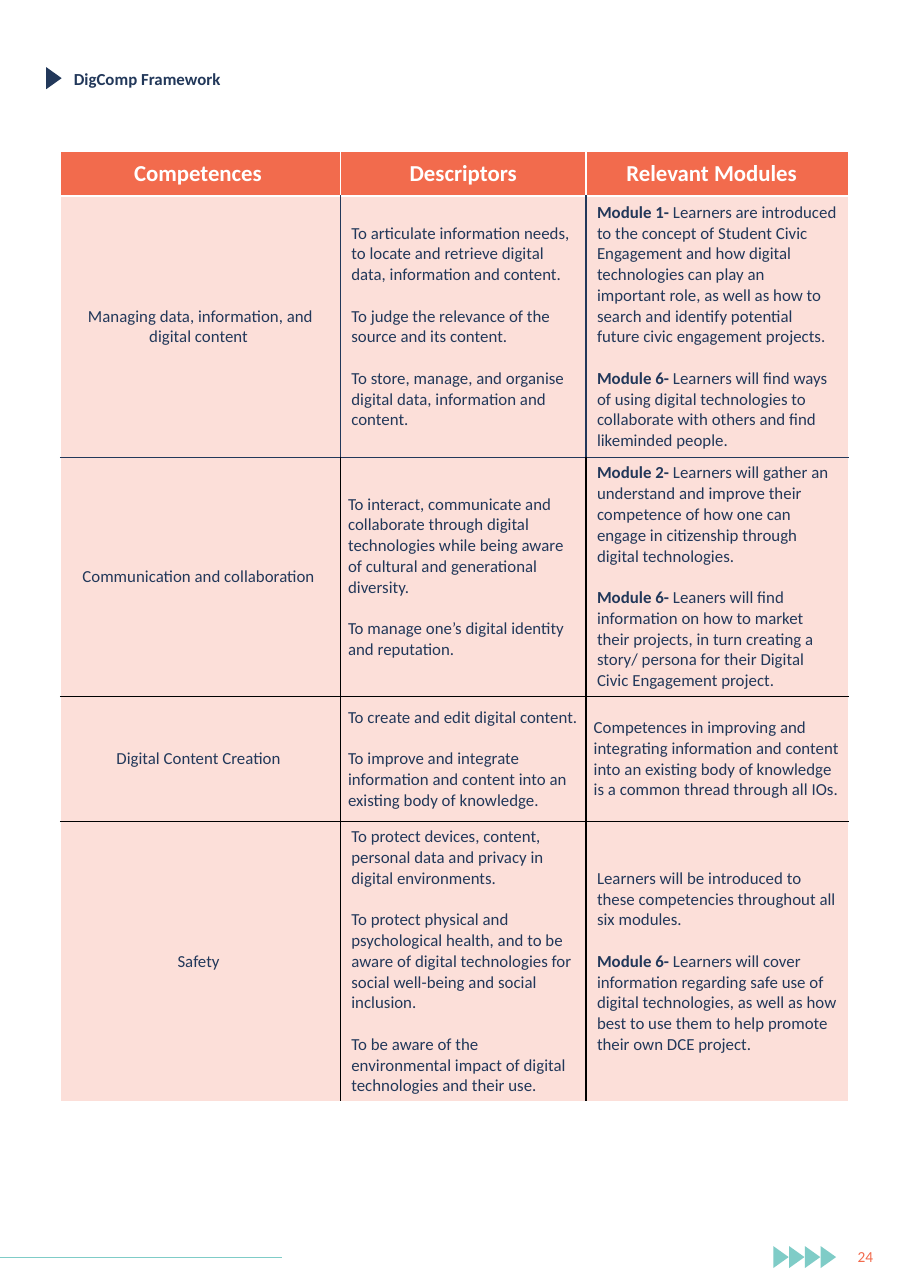
from lxml import etree
from pptx import Presentation
from pptx.dml.color import RGBColor
from pptx.enum.shapes import MSO_CONNECTOR
from pptx.enum.text import MSO_ANCHOR, MSO_AUTO_SIZE, PP_ALIGN
from pptx.oxml.ns import qn
from pptx.util import Inches, Pt

STRAIGHT = MSO_CONNECTOR.STRAIGHT
TOP, MIDDLE = MSO_ANCHOR.TOP, MSO_ANCHOR.MIDDLE
LEFT, CENTER = PP_ALIGN.LEFT, PP_ALIGN.CENTER
FIXED_SIZE = MSO_AUTO_SIZE.NONE

CORAL = RGBColor(0xF2, 0x6B, 0x4D)
NAVY = RGBColor(0x22, 0x38, 0x5A)
TEAL = RGBColor(0x7F, 0xCC, 0xC7)
WHITE = RGBColor(0xFF, 0xFF, 0xFF)
BLACK = RGBColor(0, 0, 0)
FONT = "Calibri"

TITLE = "DigComp Framework"
PAGE_NUMBER = "24"
HEADINGS = ["Competences ", "Descriptors", "Relevant Modules"]

# Each cell is a list of paragraphs; a pair is a bold lead and its text.
COMPETENCES = [
    (
        ["Managing data, information, and digital content "],
        [
            "To articulate information needs, to locate and retrieve digital data, information and content.",
            "To judge the relevance of the source and its content.",
            "To store, manage, and organise digital data, information and content.",
        ],
        [
            ("Module 1- ", "Learners are introduced to the concept of Student Civic Engagement and how "
             "digital technologies can play an important role, as well as how to search and identify "
             "potential future civic engagement projects."),
            ("Module 6- ", "Learners will find ways of using digital technologies to collaborate with "
             "others and find likeminded people."),
        ],
    ),
    (
        ["Communication and collaboration "],
        [
            "To interact, communicate and collaborate through digital technologies while being aware of "
            "cultural and generational diversity.",
            "To manage one’s digital identity and reputation.",
        ],
        [
            ("Module 2- ", "Learners will gather an understand and improve their competence of how one "
             "can engage in citizenship through digital technologies."),
            ("Module 6- ", "Leaners will find information on how to market their projects, in turn "
             "creating a story/ persona for their Digital Civic Engagement project."),
        ],
    ),
    (
        ["Digital Content Creation "],
        [
            "To create and edit digital content.",
            "To improve and integrate information and content into an existing body of knowledge.",
        ],
        [
            "Competences in improving and integrating information and content into an existing body of "
            "knowledge is a common thread through all IOs.",
        ],
    ),
    (
        ["Safety "],
        [
            "To protect devices, content, personal data and privacy in digital environments.",
            "To protect physical and psychological health, and to be aware of digital technologies for "
            "social well-being and social inclusion.",
            "To be aware of the environmental impact of digital technologies and their use.",
        ],
        [
            "Learners will be introduced to these competencies throughout all six modules.",
            ("Module 6- ", "Learners will cover information regarding safe use of digital technologies, "
             "as well as how best to use them to help promote their own DCE project."),
        ],
    ),
]

TABLE_LEFT, TABLE_TOP = 0.55, 1.37
COLUMN_WIDTHS = [2.54, 2.23, 2.38]
ROW_HEIGHTS = [0.41, 2.37, 2.17, 1.13, 2.55]
RULE_COLORS = [WHITE, NAVY, BLACK, BLACK, BLACK]  # right of and below each row's cells
TIGHT_CELLS = {(2, 1), (3, 1), (3, 2)}
BODY_OPACITY = 21
PARAGRAPH_GAP = Pt(13.5)

FOOTER_Y = 11.41
FOOTER_ARROWS = 4
FIRST_ARROW, LAST_ARROW = 7.02, 7.45
ARROW_WIDTH, ARROW_HEIGHT = 0.14, 0.2


def add_run(paragraph, text, size, color, bold=False):
    run = paragraph.add_run()
    run.text = text
    run.font.name, run.font.size, run.font.bold = FONT, Pt(size), bold
    run.font.color.rgb = color


def add_arrow(shapes, left, middle):
    top, bottom = middle - ARROW_HEIGHT / 2, middle + ARROW_HEIGHT / 2
    builder = shapes.build_freeform(Inches(left + ARROW_WIDTH), Inches(middle))
    builder.add_line_segments([(Inches(left), Inches(top)), (Inches(left), Inches(bottom))])
    arrow = builder.convert_to_shape()
    arrow.shadow.inherit = False
    arrow.line.fill.background()
    arrow.fill.solid()
    return arrow


def set_borders(cell, row, column):
    last_row, last_column = len(ROW_HEIGHTS) - 1, len(COLUMN_WIDTHS) - 1
    colors = {
        "a:lnL": RULE_COLORS[row] if column else WHITE,
        "a:lnR": RULE_COLORS[row] if column < last_column else WHITE,
        "a:lnT": RULE_COLORS[row - 1] if row else WHITE,
        "a:lnB": RULE_COLORS[row] if row < last_row else WHITE,
    }
    properties = cell._tc.get_or_add_tcPr()
    for tag, color in colors.items():
        line = etree.SubElement(properties, qn(tag), w=str(Pt(1)))
        fill = etree.SubElement(line, qn("a:solidFill"))
        etree.SubElement(fill, qn("a:srgbClr"), val=str(color))


def fill_cell(cell, opacity=100):
    cell.fill.solid()
    cell.fill.fore_color.rgb = CORAL
    if opacity < 100:
        color = cell._tc.tcPr.find(qn("a:solidFill"))[0]
        etree.SubElement(color, qn("a:alpha"), val=str(opacity * 1000))


def write_cell(cell, paragraphs, alignment, size, color, bold=False):
    frame = cell.text_frame
    for index, content in enumerate(paragraphs):
        paragraph = frame.add_paragraph() if index else frame.paragraphs[0]
        paragraph.alignment = alignment
        if index:
            paragraph.space_before = PARAGRAPH_GAP
        if isinstance(content, tuple):
            lead, content = content
            add_run(paragraph, lead, size, color, True)
        add_run(paragraph, content, size, color, bold)


def add_competence_table(shapes):
    table = shapes.add_table(
        len(ROW_HEIGHTS), len(COLUMN_WIDTHS), Inches(TABLE_LEFT), Inches(TABLE_TOP),
        Inches(sum(COLUMN_WIDTHS)), Inches(sum(ROW_HEIGHTS))).table
    table.first_row = table.horz_banding = False
    for table_column, width in zip(table.columns, COLUMN_WIDTHS):
        table_column.width = Inches(width)
    for table_row, height in zip(table.rows, ROW_HEIGHTS):
        table_row.height = Inches(height)
    rows = [[[heading] for heading in HEADINGS], *COMPETENCES]
    for row, contents in enumerate(rows):
        for column, paragraphs in enumerate(contents):
            cell = table.cell(row, column)
            cell.vertical_anchor = MIDDLE
            if (row, column) in TIGHT_CELLS:
                cell.margin_left = cell.margin_right = Inches(0.07)
                cell.margin_top = cell.margin_bottom = 0
            set_borders(cell, row, column)
            if row == 0:
                fill_cell(cell)
                write_cell(cell, paragraphs, CENTER, 14.9, WHITE, True)
            else:
                fill_cell(cell, BODY_OPACITY)
                write_cell(cell, paragraphs, LEFT if column else CENTER, 11, NAVY)
    table.cell(0, len(HEADINGS) - 1).margin_right = Inches(0.2)


def main():
    presentation = Presentation()
    presentation.slide_width, presentation.slide_height = Inches(8.27), Inches(11.69)
    slide = presentation.slides.add_slide(presentation.slide_layouts[5])
    shapes = slide.shapes

    title = shapes.title
    title.left, title.top, title.width, title.height = map(Inches, (0.57, 0.59, 7.15, 0.55))
    title.text_frame.auto_size = FIXED_SIZE
    title.text_frame.vertical_anchor = TOP
    heading = title.text_frame.paragraphs[0]
    heading.alignment, heading.line_spacing = LEFT, 0.9
    add_run(heading, TITLE, 11, NAVY, True)
    add_arrow(shapes, 0.42, 0.71).fill.fore_color.rgb = NAVY

    add_competence_table(shapes)

    rule = shapes.add_connector(STRAIGHT, 0, Inches(FOOTER_Y), Inches(2.56), Inches(FOOTER_Y))
    rule.line.color.rgb, rule.line.width = TEAL, Pt(0.75)
    etree.SubElement(rule._element.spPr, qn("a:effectLst"))
    pitch = (LAST_ARROW - FIRST_ARROW) / (FOOTER_ARROWS - 1)
    for index in range(FOOTER_ARROWS):
        add_arrow(shapes, FIRST_ARROW + index * pitch, FOOTER_Y).fill.fore_color.rgb = TEAL

    number = shapes.add_textbox(Inches(7.66), Inches(11.26), Inches(0.39), Inches(0.29))
    number.text_frame.word_wrap = True
    number.text_frame.vertical_anchor = MIDDLE
    number.text_frame.paragraphs[0].alignment = CENTER
    add_run(number.text_frame.paragraphs[0], PAGE_NUMBER, 10, CORAL)

    presentation.save("out.pptx")


if __name__ == "__main__":
    main()
